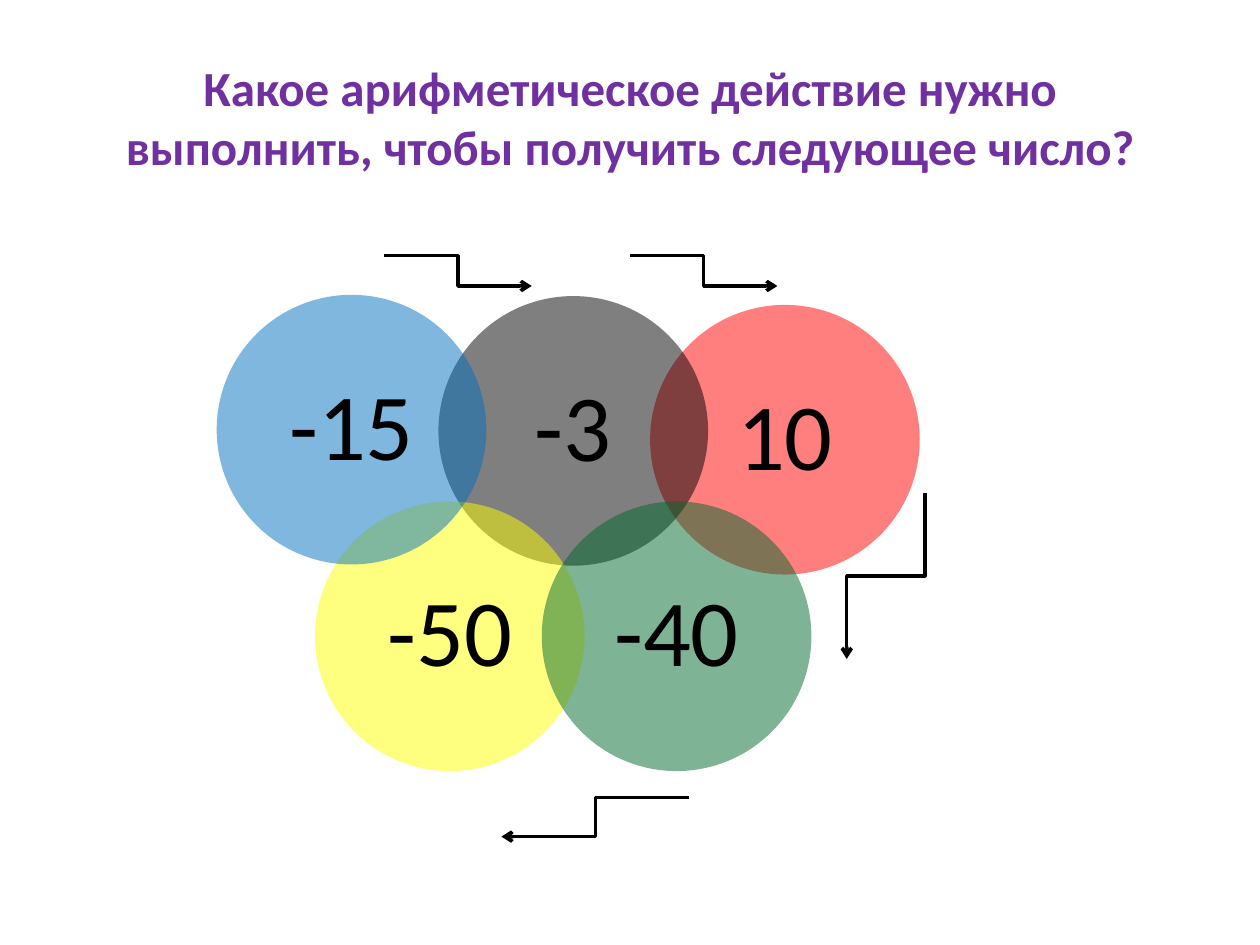
from lxml import etree
from pptx import Presentation
from pptx.dml.color import RGBColor
from pptx.enum import shapes, text
from pptx.oxml.ns import qn
from pptx.util import Inches, Pt

BLACK = RGBColor(0, 0, 0)
BLUE = RGBColor(0x00, 0x70, 0xC0)
GREEN = RGBColor(0x00, 0x68, 0x2F)
PURPLE = RGBColor(0x70, 0x30, 0xA0)
RED = RGBColor(0xFF, 0, 0)
YELLOW = RGBColor(0xFF, 0xFF, 0)

TITLE = "Какое арифметическое действие нужно выполнить, чтобы получить следующее число?"

# Number, fill, centre of the circle; from back to front
CIRCLES = [
    ("10", RED, 6.23, 3.49),
    ("-3", BLACK, 4.55, 3.42),
    ("-50", YELLOW, 3.57, 5.05),
    ("-15", BLUE, 2.79, 3.41),
    ("-40", GREEN, 5.37, 5.05),
]
DIAMETER = 2.14
LABEL_SIDE = DIAMETER / 2 ** 0.5  # square inscribed in the circle

# Start, end, whether the first segment is vertical
ARROWS = [
    ((3.05, 2.03), (4.22, 2.27), False),
    ((5, 2.03), (6.17, 2.27), False),
    ((7.34, 3.91), (6.72, 5.23), True),
    ((5.47, 6.33), (3.98, 6.64), False),
]


def add_text(parent, content, left, top, width, height, *, size, color,
             bold=False, margins=(0.1, 0.05), line_spacing=None, space_after=0):
    box = parent.shapes.add_textbox(*map(Inches, (left, top, width, height)))
    frame = box.text_frame
    frame.word_wrap = True
    frame.vertical_anchor = text.MSO_ANCHOR.MIDDLE
    frame.margin_left = frame.margin_right = Inches(margins[0])
    frame.margin_top = frame.margin_bottom = Inches(margins[1])
    paragraph = frame.paragraphs[0]
    paragraph.alignment = text.PP_ALIGN.CENTER
    paragraph.line_spacing = line_spacing
    paragraph.space_after = Pt(space_after)
    run = paragraph.add_run()
    run.text = content
    run.font.name = "Calibri"
    run.font.size = Pt(size)
    run.font.bold = bold
    run.font.color.rgb = color


def add_circle(parent, color, center_x, center_y):
    radius = DIAMETER / 2
    circle = parent.shapes.add_shape(
        shapes.MSO_SHAPE.OVAL, Inches(center_x - radius), Inches(center_y - radius),
        Inches(DIAMETER), Inches(DIAMETER))
    circle.shadow.inherit = False
    circle.fill.solid()
    circle.fill.fore_color.rgb = color
    circle.line.fill.background()
    color_element = circle.fill._xPr.find(".//" + qn("a:srgbClr"))
    etree.SubElement(color_element, qn("a:alpha"), val="50000")


def add_bent_arrow(slide, start, end, vertical_first):
    if vertical_first:
        # Turn the end points back a quarter; the shape's rotation restores them
        middle_x, middle_y = ((a + b) / 2 for a, b in zip(start, end))
        start, end = ((middle_x + y - middle_y, middle_y - x + middle_x)
                      for x, y in (start, end))
    arrow = slide.shapes.add_connector(
        shapes.MSO_CONNECTOR.ELBOW, *map(Inches, (*start, *end)))
    arrow.line.color.rgb = BLACK
    arrow.line.width = Pt(2)
    properties = arrow._element.spPr
    if vertical_first:
        properties.find(qn("a:xfrm")).set("rot", str(90 * 60000))
    etree.SubElement(properties.find(qn("a:ln")), qn("a:tailEnd"), type="arrow")
    etree.SubElement(properties, qn("a:effectLst"))


def main():
    presentation = Presentation()
    presentation.slide_width, presentation.slide_height = Inches(10), Inches(7.5)
    slide = presentation.slides.add_slide(presentation.slide_layouts[6])

    # Title
    add_text(slide, TITLE, 0.5, 0.3, 9, 1.25, size=28, color=PURPLE, bold=True)

    # Overlapping circles with their numbers
    group = slide.shapes.add_group_shape()
    for number, color, center_x, center_y in CIRCLES:
        add_circle(group, color, center_x, center_y)
        add_text(group, number, center_x - LABEL_SIDE / 2, center_y - LABEL_SIDE / 2,
                 LABEL_SIDE, LABEL_SIDE, size=54, color=BLACK,
                 margins=(0.12, 0.07), line_spacing=0.9)

    # Arrows from each number to the next
    for start, end, vertical_first in ARROWS:
        add_bent_arrow(slide, start, end, vertical_first)

    presentation.save("out.pptx")


if __name__ == "__main__":
    main()
